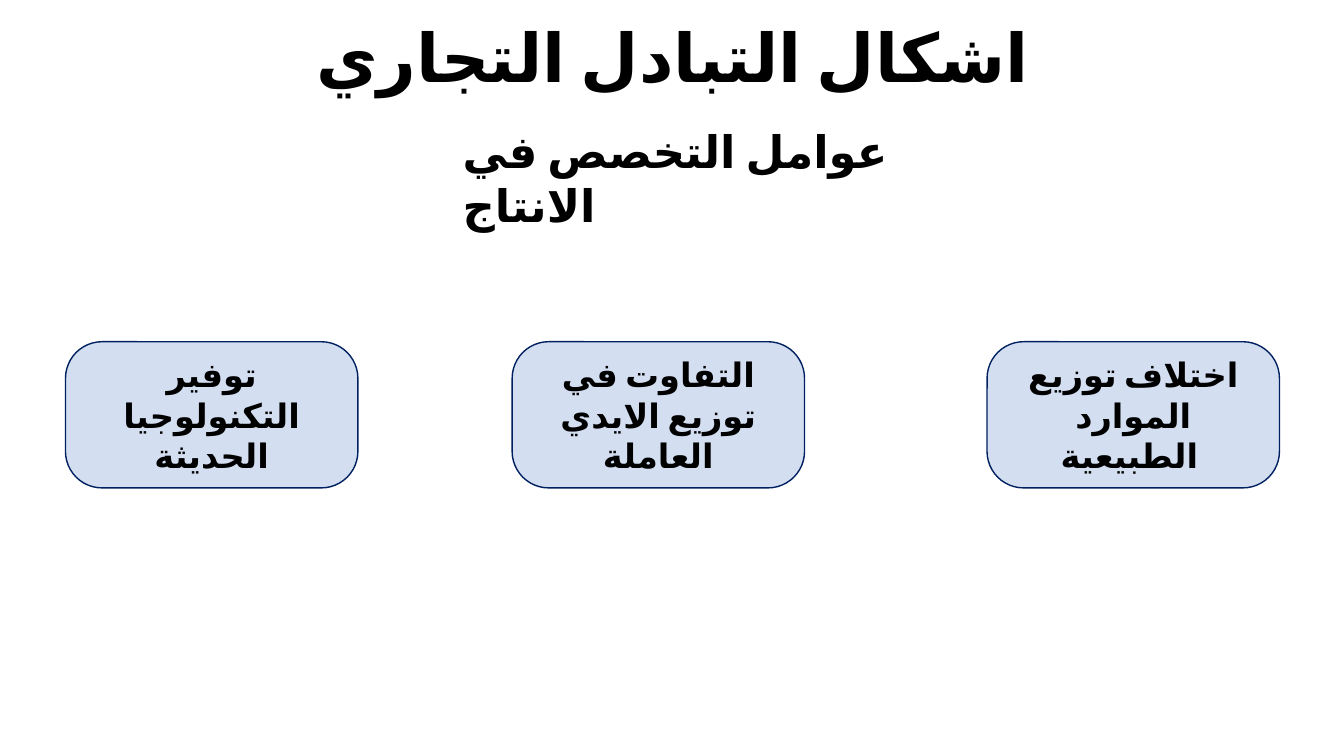
from lxml import etree
from pptx import Presentation
from pptx.dml.color import RGBColor
from pptx.enum.lang import MSO_LANGUAGE_ID
from pptx.enum.shapes import MSO_SHAPE
from pptx.enum.text import MSO_ANCHOR, MSO_AUTO_SIZE, PP_ALIGN
from pptx.oxml.ns import qn
from pptx.util import Emu, Pt

ROUNDED = MSO_SHAPE.ROUNDED_RECTANGLE
TOP, MIDDLE = MSO_ANCHOR.TOP, MSO_ANCHOR.MIDDLE
LEFT, CENTER = PP_ALIGN.LEFT, PP_ALIGN.CENTER
GROW = MSO_AUTO_SIZE.SHAPE_TO_FIT_TEXT
ARABIC = MSO_LANGUAGE_ID.ARABIC

FONT = "Calibri"
EMU_PER_PX = 9144
BLANK_LAYOUT = 6
FACTOR_TOP, FACTOR_WIDTH, FACTOR_HEIGHT = 339, 290, 145
FACTORS = [
    (65, "توفير التكنولوجيا الحديثة"),
    (508, "التفاوت في توزيع الايدي العاملة"),
    (979, "اختلاف توزيع الموارد الطبيعية "),
]


def px(length):
    """Turn a length in pixels, 100 to the inch, into EMU."""
    return Emu(length * EMU_PER_PX)


def color(value):
    """Turn a hex string into a colour."""
    return RGBColor.from_string(value)


def apply_format(target, values):
    """Set each named attribute on the target."""
    for name, value in values.items():
        setattr(target, name, value)


def write_text(box, text, size, frame_format, para_format):
    """Write one bold black Arabic paragraph into a box."""
    frame = box.text_frame
    apply_format(frame, {"word_wrap": True, **frame_format})
    para = frame.paragraphs[0]
    apply_format(para, para_format)
    span = para.add_run()
    span.text = text
    apply_format(span.font, {"name": FONT, "size": Pt(size), "bold": True,
                             "language_id": ARABIC})
    span.font.color.rgb = color("000000")
    etree.SubElement(span.font._element, qn("a:cs"), typeface=FONT)


def add_heading(page, place, text, size, frame_format, para_format):
    """Add a text box that holds a heading."""
    box = page.shapes.add_textbox(*map(px, place))
    write_text(box, text, size, frame_format, para_format)


def add_factor(page, left, text):
    """Add a rounded card that names one factor."""
    place = (left, FACTOR_TOP, FACTOR_WIDTH, FACTOR_HEIGHT)
    card = page.shapes.add_shape(ROUNDED, *map(px, place))
    card.adjustments[0] = 0.25
    card.shadow.inherit = False
    card.fill.solid()
    card.fill.fore_color.rgb = color("D3DEF1")
    card.line.color.rgb = color("002060")
    card.line.width = Pt(1)
    write_text(card, text, 24, {"vertical_anchor": MIDDLE}, {"alignment": CENTER})


def main():
    """Build the slide and save it."""
    deck = Presentation()
    apply_format(deck, {"slide_width": px(1333), "slide_height": px(750)})
    page = deck.slides.add_slide(deck.slide_layouts[BLANK_LAYOUT])
    add_heading(page, (92, -12, 1150, 145), "اشكال التبادل التجاري", 48,
                {"vertical_anchor": MIDDLE},
                {"alignment": CENTER, "line_spacing": 0.9})
    for left, text in FACTORS:
        add_factor(page, left, text)
    add_heading(page, (449, 118, 568, 64), "عوامل التخصص في الانتاج", 32,
                {"vertical_anchor": TOP, "auto_size": GROW},
                {"alignment": LEFT})
    deck.save("out.pptx")


if __name__ == "__main__":
    main()
